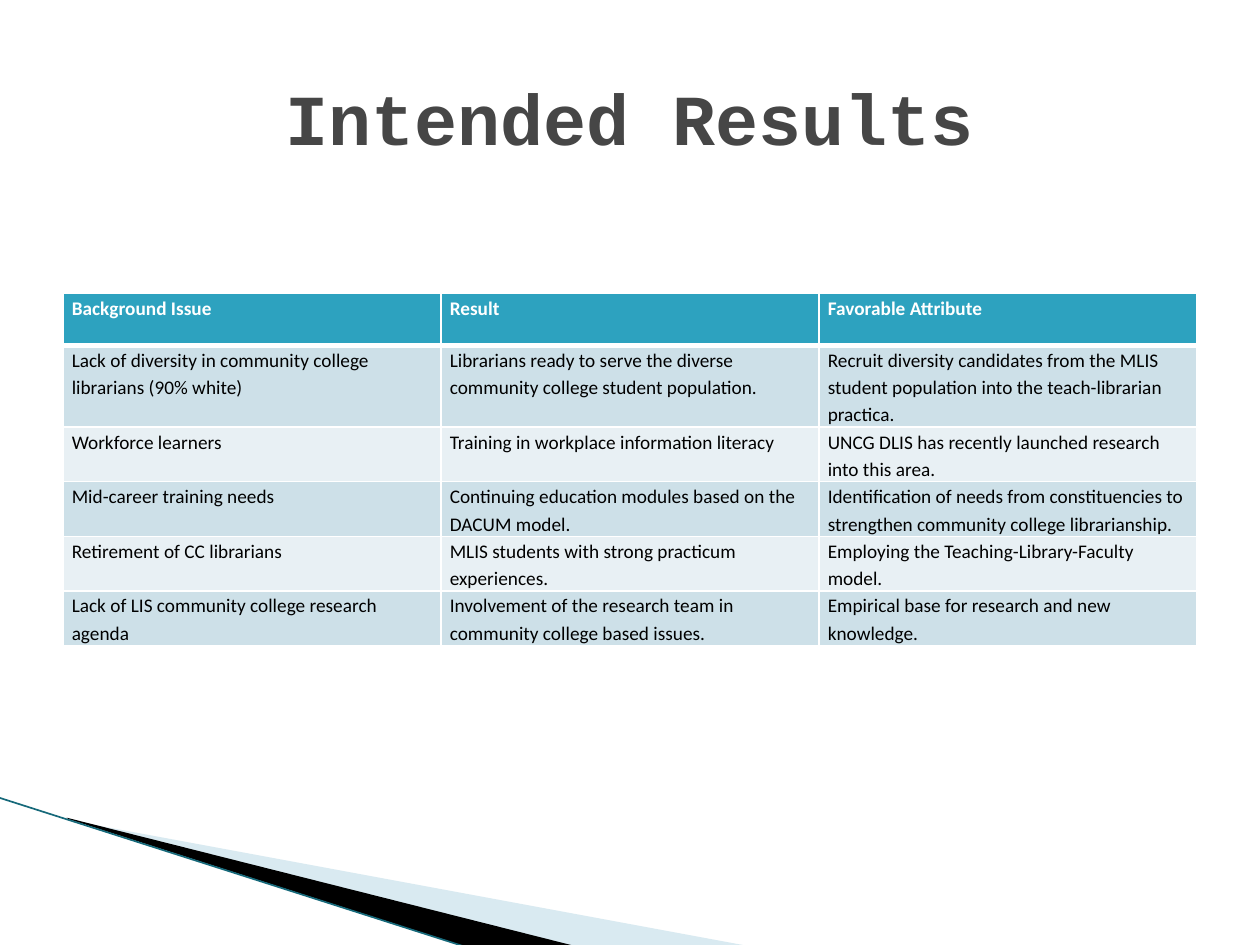
from dataclasses import dataclass

from lxml import etree
from pptx import Presentation
from pptx import util as u
from pptx.dml.color import RGBColor
from pptx.enum import shapes, text
from pptx.oxml import ns

PX = 9144  # EMU per px, 100 px to the inch


@dataclass(frozen=True)
class Theme:
    title: str = "464646"
    header: str = "2DA2BF"
    bands: tuple = ("CDE0E8", "E8F0F4")
    white: str = "FFFFFF"
    black: str = "000000"
    pale_wedge: str = "A0CBDC"
    edge: str = "16697A"
    title_font: str = "Courier New"
    body_font: str = "Calibri"
    title_size: int = 41
    body_size: int = 11


ROWS = [
    ("Background Issue", "Result", "Favorable Attribute"),
    ("Lack of diversity in community college librarians (90% white)",
     "Librarians ready to serve the diverse community college student population.",
     "Recruit diversity candidates from the MLIS student population into the "
     "teach-librarian practica."),
    ("Workforce learners",
     "Training in workplace information literacy",
     "UNCG DLIS has recently launched research into this area."),
    ("Mid-career training needs",
     "Continuing education modules based on the DACUM model.",
     "Identification of needs from constituencies to strengthen community "
     "college librarianship."),
    ("Retirement of CC librarians",
     "MLIS students with strong practicum experiences.",
     "Employing the Teaching-Library-Faculty model."),
    ("Lack of LIS community college research agenda",
     "Involvement of the research team in community college based issues.",
     "Empirical base for research and new knowledge."),
]


def set_all(target, values):
    for name, value in values.items():
        setattr(target, name, value)


def add_xml(parent, tag, **attributes):
    return etree.SubElement(parent, ns.qn(tag), attributes)


class SlideBuilder:
    def __init__(self, slide, theme):
        self.slide = slide
        self.theme = theme

    def words(self, paragraph, words, color, **font):
        paragraph.text = words
        set_all(paragraph.font, font)
        paragraph.font.color.rgb = RGBColor.from_string(color)

    def wedge(self, points, color, alpha=None):
        builder = self.slide.shapes.build_freeform(*points[0], scale=PX)
        builder.add_line_segments(points[1:], close=True)
        wedge = builder.convert_to_shape()
        wedge.shadow.inherit = False
        wedge.line.fill.background()
        wedge.fill.solid()
        wedge.fill.fore_color.rgb = RGBColor.from_string(color)
        if alpha is not None:
            tint = wedge._element.spPr.find(ns.qn("a:solidFill")).find(ns.qn("a:srgbClr"))
            add_xml(tint, "a:alpha", val=str(alpha * 1000))

    def line(self, start, end, color, width):
        ends = [value * PX for value in (*start, *end)]
        edge = self.slide.shapes.add_connector(shapes.MSO_CONNECTOR.STRAIGHT, *ends)
        edge.line.color.rgb = RGBColor.from_string(color)
        edge.line.width = u.Pt(width)
        add_xml(edge._element.spPr, "a:effectLst")

    def title(self, words, left, top, width, height):
        box = self.slide.shapes.add_textbox(*(v * PX for v in (left, top, width, height)))
        set_all(box.text_frame, {"word_wrap": True,
                                 "vertical_anchor": text.MSO_ANCHOR.MIDDLE})
        heading = box.text_frame.paragraphs[0]
        heading.alignment = text.PP_ALIGN.CENTER
        self.words(heading, words, self.theme.title, name=self.theme.title_font,
                   size=u.Pt(self.theme.title_size), bold=True)

    def borders(self, cell, widths):
        properties = cell._tc.get_or_add_tcPr()
        for side, width in widths.items():
            border = add_xml(properties, f"a:ln{side}", w=str(u.Pt(width)))
            add_xml(add_xml(border, "a:solidFill"), "a:srgbClr", val=self.theme.white)

    def cell(self, cell, words, row):
        theme = self.theme
        is_header = row == 0
        self.borders(cell, {"L": 1, "R": 1, "T": 3 if row == 1 else 1,
                            "B": 3 if is_header else 1})
        cell.fill.solid()
        fill = theme.header if is_header else theme.bands[(row - 1) % 2]
        cell.fill.fore_color.rgb = RGBColor.from_string(fill)
        set_all(cell, {"margin_left": 7 * PX, "margin_right": 7 * PX,
                       "margin_top": 0, "margin_bottom": 0})
        paragraph = cell.text_frame.paragraphs[0]
        paragraph.line_spacing = 1.15
        self.words(paragraph, words, theme.white if is_header else theme.black,
                   name=theme.body_font, size=u.Pt(theme.body_size), bold=is_header)

    def table(self, rows, left, top, column_width, row_height):
        size = (column_width * len(rows[0]), row_height * len(rows))
        frame = self.slide.shapes.add_table(
            len(rows), len(rows[0]), *(v * PX for v in (left, top, *size)))
        for r, row in enumerate(rows):
            for c, words in enumerate(row):
                self.cell(frame.table.cell(r, c), words, r)


def main():
    deck = Presentation()
    set_all(deck, {"slide_width": 1000 * PX, "slide_height": 750 * PX})
    theme = Theme()
    page = SlideBuilder(deck.slides.add_slide(deck.slide_layouts[6]), theme)

    # Corner decoration
    page.wedge([(55, 651), (595, 751), (456, 751), (55, 650)], theme.pale_wedge, alpha=40)
    page.wedge([(53, 649), (457, 751), (372, 752), (54, 650)], theme.black)
    page.line((-1, 633), (371, 752), theme.edge, 0.95)

    # Results table
    page.table(ROWS, 50, 233, column_width=300, row_height=41)

    # Title
    page.title("Intended Results", 50, 30, 900, 125)

    deck.save("out.pptx")


if __name__ == "__main__":
    main()
